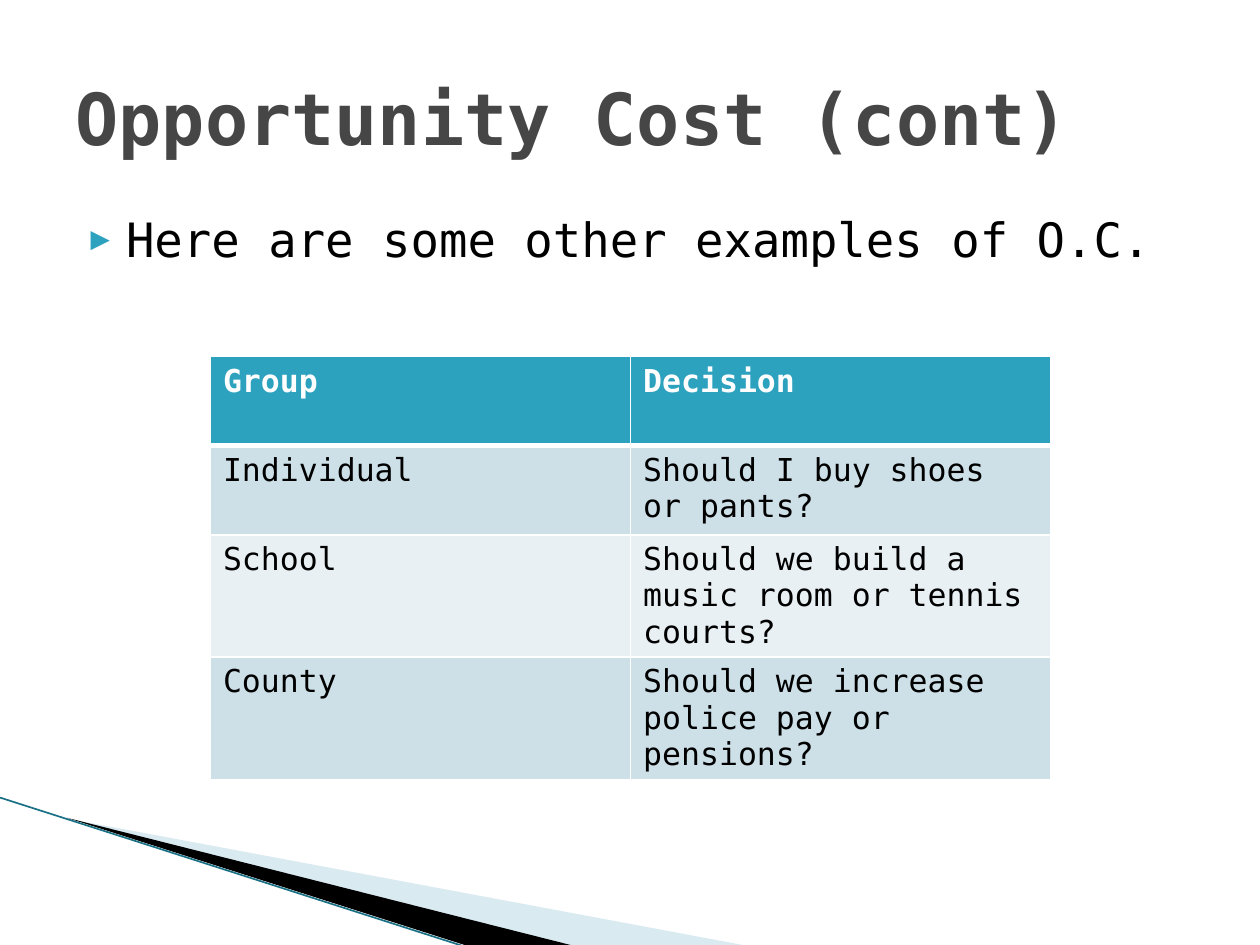
"""Build the Opportunity Cost slide with its table of example decisions."""
from lxml.etree import SubElement
from pptx import Presentation
from pptx.dml.color import RGBColor
from pptx.enum.shapes import MSO_CONNECTOR
from pptx.enum.text import MSO_ANCHOR, MSO_AUTO_SIZE, PP_ALIGN
from pptx.oxml import parse_xml
from pptx.oxml.ns import nsdecls, qn
from pptx.util import Inches, Pt

FONT = "DejaVu Sans Mono"
BLACK = RGBColor(0x00, 0x00, 0x00)
WHITE = RGBColor(0xFF, 0xFF, 0xFF)
GRAY = RGBColor(0x46, 0x46, 0x46)
TEAL = RGBColor(0x2D, 0xA2, 0xBF)
DARK_TEAL = RGBColor(0x1A, 0x70, 0x85)
PALE_BLUE = RGBColor(0xA0, 0xCB, 0xDC)
BAND_DARK = RGBColor(0xCD, 0xE0, 0xE8)
BAND_LIGHT = RGBColor(0xE8, 0xF0, 0xF4)


def style(para, size, color, bold=False):
    para.alignment = PP_ALIGN.LEFT
    para.space_before = Pt(0)
    para.font.name = FONT
    para.font.size = Pt(size)
    para.font.bold = bold
    para.font.color.rgb = color


def place(box, left, top, width, height):
    box.left, box.top = Inches(left), Inches(top)
    box.width, box.height = Inches(width), Inches(height)
    box.text_frame.auto_size = MSO_AUTO_SIZE.NONE


deck = Presentation()
deck.slide_width, deck.slide_height = Inches(10), Inches(7.5)
slide = deck.slides.add_slide(deck.slide_layouts[1])
shapes = slide.shapes

wedges = [
    (PALE_BLUE, [(0.55, 6.5), (5.95, 7.51), (4.56, 7.51)]),
    (BLACK, [(0.53, 6.49), (4.57, 7.51), (3.72, 7.51)]),
]
for color, points in wedges:
    corners = [(Inches(x), Inches(y)) for x, y in points]
    builder = shapes.build_freeform(*corners[0])
    builder.add_line_segments(corners[1:])
    wedge = builder.convert_to_shape()
    wedge.shadow.inherit = False
    wedge.fill.solid()
    wedge.fill.fore_color.rgb = color
    wedge.line.fill.background()
    if color == PALE_BLUE:
        tint = wedge.fill._xPr.find(qn("a:solidFill"))[0]
        SubElement(tint, qn("a:alpha"), val="40000")

edge = shapes.add_connector(
    MSO_CONNECTOR.STRAIGHT, Inches(0), Inches(6.33), Inches(3.71), Inches(7.52))
edge.line.color.rgb = DARK_TEAL
edge.line.width = Pt(0.95)
SubElement(edge._element.spPr, qn("a:effectLst"))

title = shapes.title
place(title, 0.5, 0.3, 9, 1.25)
title.text_frame.vertical_anchor = MSO_ANCHOR.MIDDLE
title.text_frame.text = "Opportunity Cost (cont)"
style(title.text_frame.paragraphs[0], 41, GRAY, bold=True)

body = slide.placeholders[1]
place(body, 0.5, 1.62, 9, 4.95)
body.text_frame.text = "Here are some other examples of O.C."
para = body.text_frame.paragraphs[0]
props = para._p.get_or_add_pPr()
props.set("marL", str(Inches(0.4)))
props.set("indent", str(Inches(-0.28)))
bullet_color = SubElement(props, qn("a:buClr"))
SubElement(bullet_color, qn("a:srgbClr"), val=str(TEAL))
SubElement(props, qn("a:buSzPct"), val="68000")
SubElement(props, qn("a:buFont"), typeface=FONT)
SubElement(props, qn("a:buChar"), char="▶")
style(para, 27, BLACK)

rows = [
    ("Group", "Decision"),
    ("Individual", "Should I buy shoes or pants?"),
    ("School", "Should we build a music room or tennis courts?"),
    ("County", "Should we increase police pay or pensions?"),
]
table = shapes.add_table(
    len(rows), 2, Inches(1.67), Inches(2.83), Inches(6.67), Inches(2.83)).table
for r, row in enumerate(rows):
    header = r == 0
    fill = TEAL if header else BAND_DARK if r % 2 else BAND_LIGHT
    for c, text in enumerate(row):
        cell = table.cell(r, c)
        cell.text = text
        style(cell.text_frame.paragraphs[0], 18, WHITE if header else BLACK, header)
        cell.fill.solid()
        cell.fill.fore_color.rgb = fill
        cell_props = cell._tc.get_or_add_tcPr()
        for index, side in enumerate("LRTB"):
            thick = (header and side == "B") or (r == 1 and side == "T")
            cell_props.insert(index, parse_xml(
                f'<a:ln{side} {nsdecls("a")} w="{Pt(3 if thick else 1)}"><a:solidFill>'
                f'<a:srgbClr val="{WHITE}"/></a:solidFill></a:ln{side}>'))

deck.save("out.pptx")
